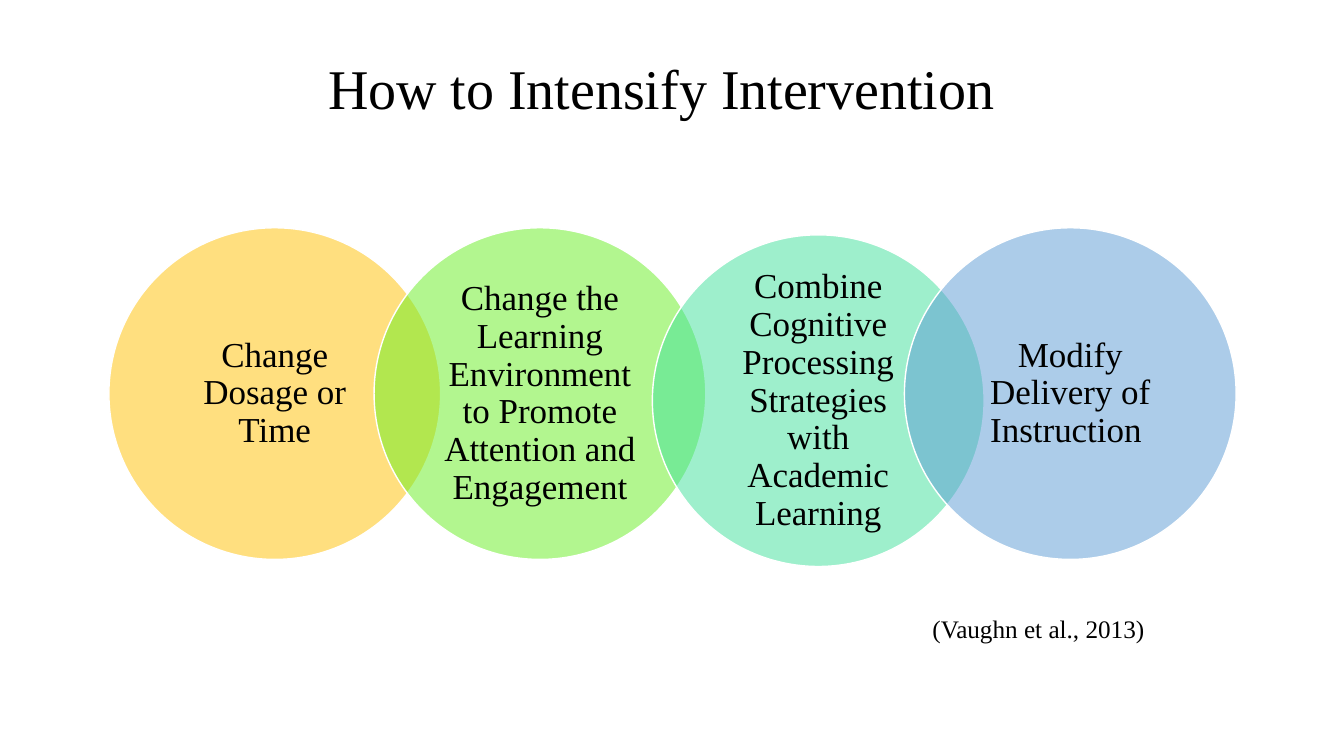
from dataclasses import dataclass

from lxml import etree
from pptx import Presentation
from pptx import util as u
from pptx.dml.color import RGBColor
from pptx.enum import shapes, text
from pptx.oxml.ns import qn

EMU_PER_PX = 9144
SLIDE_SIZE = (1333, 750)
DIAMETER = 329
STRATEGIES = [
    ("Change Dosage or Time", 108, 226, "FFC000"),
    ("Change the Learning Environment to Promote Attention and Engagement", 371, 226, "67EF21"),
    ("Combine Cognitive Processing Strategies with Academic Learning", 647, 233, "3FE19B"),
    ("Modify Delivery of Instruction ", 897, 226, "5B9BD5"),
]


@dataclass(frozen=True)
class Theme:
    font: str = "Times New Roman"
    ink: str = "000000"
    outline: str = "FFFFFF"
    opacity: int = 50
    title_size: int = 40
    strategy_size: int = 25
    citation_size: int = 18


THEME = Theme()


def px(length):
    return u.Emu(length * EMU_PER_PX)


def set_attributes(target, values):
    for name, value in values.items():
        setattr(target, name, value)


def write(frame, wording, size, alignment, line_spacing=1.0, **frame_format):
    set_attributes(frame, {"word_wrap": True, "auto_size": text.MSO_AUTO_SIZE.NONE, **frame_format})
    paragraph = frame.paragraphs[0]
    set_attributes(paragraph, {"alignment": alignment, "line_spacing": line_spacing})
    run = paragraph.add_run()
    run.text = wording
    set_attributes(run.font, {"name": THEME.font, "size": u.Pt(size)})
    run.font.color.rgb = RGBColor.from_string(THEME.ink)


def add_title(slide, wording, left, top, width, height):
    heading = slide.shapes.title
    set_attributes(heading, {"left": px(left), "top": px(top), "width": px(width), "height": px(height)})
    write(heading.text_frame, wording, THEME.title_size, text.PP_ALIGN.CENTER, 0.9,
          vertical_anchor=text.MSO_ANCHOR.MIDDLE)


def add_strategy(slide, wording, left, top, color):
    circle = slide.shapes.add_shape(
        shapes.MSO_SHAPE.OVAL, px(left), px(top), px(DIAMETER), px(DIAMETER))
    circle.shadow.inherit = False
    circle.fill.solid()
    circle.fill.fore_color.rgb = RGBColor.from_string(color)
    tint = circle.fill._xPr.find(qn("a:solidFill"))[0]
    etree.SubElement(tint, qn("a:alpha"), val=str(THEME.opacity * 1000))
    circle.line.color.rgb = RGBColor.from_string(THEME.outline)
    circle.line.width = u.Pt(1)
    write(circle.text_frame, wording, THEME.strategy_size, text.PP_ALIGN.CENTER, 0.9,
          vertical_anchor=text.MSO_ANCHOR.MIDDLE,
          margin_left=px(18), margin_right=px(18), margin_top=px(3), margin_bottom=px(3))


def add_citation(slide, wording, left, top, width, height):
    citation = slide.shapes.add_textbox(px(left), px(top), px(width), px(height))
    write(citation.text_frame, wording, THEME.citation_size, text.PP_ALIGN.RIGHT,
          auto_size=text.MSO_AUTO_SIZE.SHAPE_TO_FIT_TEXT)


def main():
    deck = Presentation()
    deck.slide_width, deck.slide_height = map(px, SLIDE_SIZE)
    slide = deck.slides.add_slide(deck.slide_layouts[5])
    add_title(slide, "How to Intensify Intervention", 171, 48, 970, 86)
    for strategy in STRATEGIES:
        add_strategy(slide, *strategy)
    add_citation(slide, "(Vaughn et al., 2013)", 657, 604, 488, 40)
    deck.save("out.pptx")


if __name__ == "__main__":
    main()
